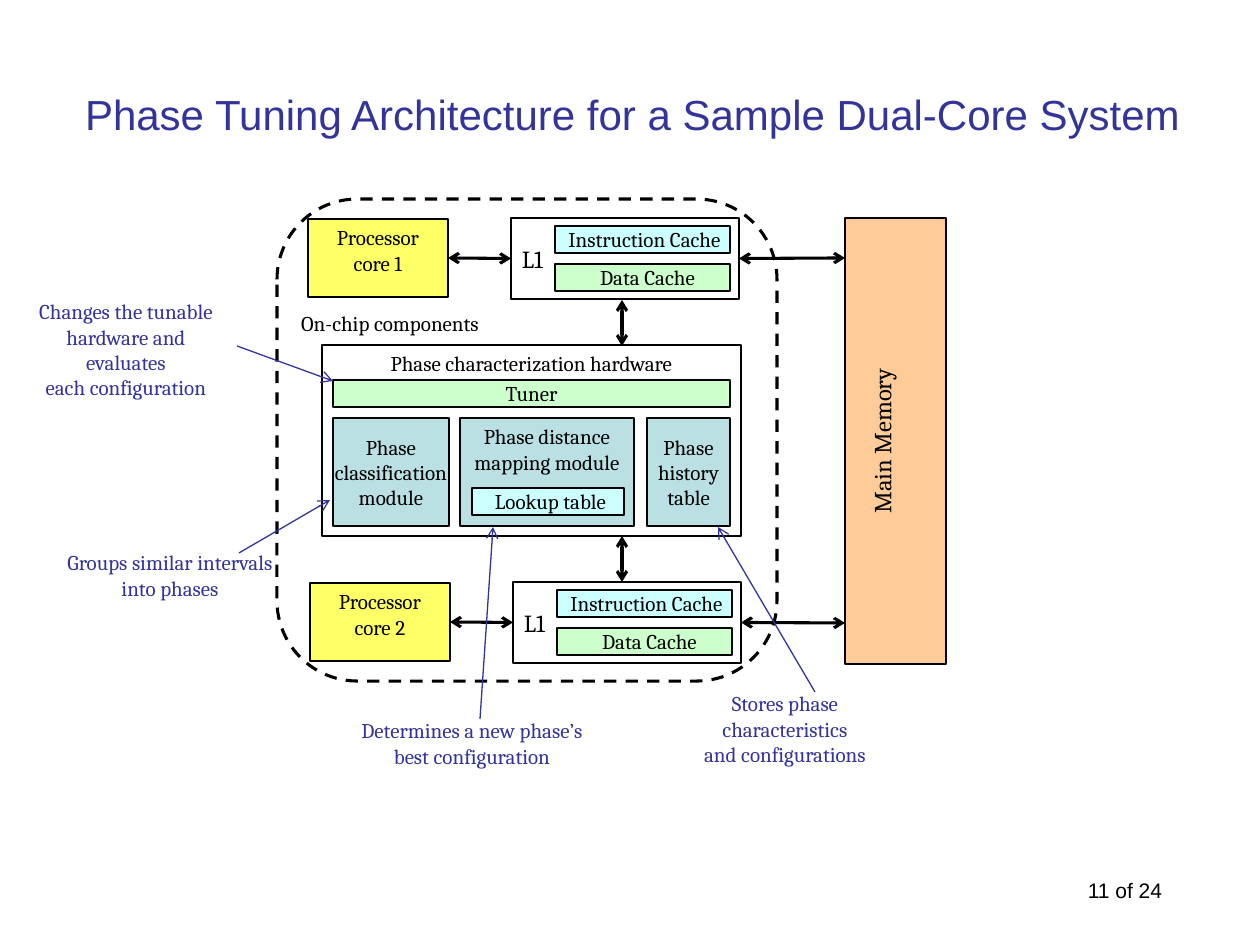
import pptx
import pptx.util
import pptx.dml.color
import pptx.enum.dml
import pptx.enum.shapes
import pptx.enum.text
import pptx.oxml
import pptx.oxml.ns

PX = 914400 / 126
COLORS = {
    "ink": "000000",
    "note": "333399",
    "core": "FFFF66",
    "memory": "FFCC99",
    "green": "CCFFCC",
    "cyan": "CCFFFF",
    "module": "BBE0E3",
}
SHAPE = pptx.enum.shapes.MSO_SHAPE
TOP = pptx.enum.text.MSO_ANCHOR.TOP
MIDDLE = pptx.enum.text.MSO_ANCHOR.MIDDLE


def px(*lengths):
    return [pptx.util.Emu(round(length * PX)) for length in lengths]


def rgb(name):
    return pptx.dml.color.RGBColor.from_string(COLORS[name])


def write(holder, text, size=12, font="Cambria", color="ink", anchor=TOP,
          wrap=False, insets=(8, 6, 8, 6)):
    frame = holder.text_frame
    frame.word_wrap = wrap
    frame.vertical_anchor = anchor
    (frame.margin_left, frame.margin_top,
     frame.margin_right, frame.margin_bottom) = px(*insets)
    for index, line in enumerate(text.split("\n")):
        paragraph = frame.add_paragraph() if index else frame.paragraphs[0]
        paragraph.alignment = pptx.enum.text.PP_ALIGN.CENTER
        run = paragraph.add_run()
        run.text = line
        run.font.size = pptx.util.Pt(size)
        run.font.name = font
        run.font.color.rgb = rgb(color)


def label(shapes, box, text, **style):
    holder = shapes.add_textbox(*px(*box))
    write(holder, text, **style)
    return holder


def block(shapes, box, fill=None, text=None, kind=SHAPE.RECTANGLE, weight=1.5, **style):
    shape = shapes.add_shape(kind, *px(*box))
    shape.shadow.inherit = False
    if fill:
        shape.fill.solid()
        shape.fill.fore_color.rgb = rgb(fill)
    else:
        shape.fill.background()
    shape.line.color.rgb = rgb("ink")
    shape.line.width = pptx.util.Pt(weight)
    if text:
        write(shape, text, **style)
    return shape


def arrow(shapes, start, end, color="ink", weight=1.75, ends=("head", "tail")):
    connector = shapes.add_connector(
        pptx.enum.shapes.MSO_CONNECTOR.STRAIGHT, *px(*start, *end))
    connector.line.color.rgb = rgb(color)
    connector.line.width = pptx.util.Pt(weight)
    line = connector.line._get_or_add_ln()
    for end_name in ends:
        tip = pptx.oxml.parse_xml(
            f'<a:{end_name}End {pptx.oxml.ns.nsdecls("a")} type="arrow"/>')
        line.append(tip)
    connector._element.spPr.append(
        pptx.oxml.parse_xml(f'<a:effectLst {pptx.oxml.ns.nsdecls("a")}/>'))
    return connector


def heading(shapes, box):
    label(shapes, box, "Phase Tuning Architecture for a Sample Dual-Core System",
          size=24, font="Arial", color="note", anchor=MIDDLE, wrap=True)


def page_number(shapes, box):
    label(shapes, box, "11 of 24", font="Arial", wrap=True)


def main_memory(shapes, box):
    left, top, width, height = box
    shift = (height - width) / 2
    memory = block(shapes, (left - shift, top + shift, height, width), "memory",
                   "Main Memory", size=14, anchor=MIDDLE, insets=(13, 6, 13, 34))
    memory.rotation = 270


def core_cluster(shapes, left, top, number):
    parts = shapes.add_group_shape().shapes
    core = block(parts, (left, top + 1, 140, 78), "core", f"Processor\ncore {number}")
    link = arrow(parts, (left + 203, top + 41), (left + 140, top + 40))
    caches = (("Data Cache", "green", 46, 10), ("Instruction Cache", "cyan", 8, 4))
    for name, fill, offset, indent in caches:
        block(parts, (left + 247, top + offset, 175, 27), fill, name,
              anchor=MIDDLE, insets=(indent, 0, 0, 0))
    level_one = block(parts, (left + 203, top, 228, 81))
    label(parts, (left + 198, top + 20, 53, 43), "L1", size=14)
    link.begin_connect(level_one, 1)
    link.end_connect(core, 3)
    return level_one


def characterization_hardware(shapes, box):
    left, top, width, height = box
    row = top + 73
    block(shapes, (left + 325, row, 83, 108), "module", "Phase\nhistory\ntable",
          anchor=MIDDLE)
    mapping = shapes.add_group_shape().shapes
    block(mapping, (left + 138, row, 174, 108), "module",
          "Phase distance\nmapping module")
    block(mapping, (left + 150, row + 70, 152, 27), "cyan", "Lookup table",
          anchor=MIDDLE, insets=(5, 0, 0, 0))
    block(shapes, (left + 11, row, 116, 108), "module",
          "Phase\nclassification\nmodule", anchor=MIDDLE, insets=(0, 6, 0, 6))
    block(shapes, (left + 11, top + 35, width - 22, 27), "green", "Tuner",
          anchor=MIDDLE, insets=(0, 0, 0, 0))
    block(shapes, box, text="Phase characterization hardware")


def chip_outline(shapes, box):
    outline = block(shapes, box, kind=SHAPE.ROUNDED_RECTANGLE, weight=1.75)
    outline.line.dash_style = pptx.enum.dml.MSO_LINE.DASH
    label(shapes, (box[0] + 8, box[1] + 106, 210, 38), "On-chip components")


def annotation(shapes, box, text, start, target):
    parts = shapes.add_group_shape().shapes
    arrow(parts, start, target, color="note", weight=0.75, ends=("tail",))
    label(parts, box, text, color="note", wrap=True)


def main():
    deck = pptx.Presentation()
    deck.slide_width, deck.slide_height = px(1260, 945)
    shapes = deck.slides.add_slide(deck.slide_layouts[6]).shapes

    page_number(shapes, (1045, 872, 160, 38))
    heading(shapes, (21, 35, 1223, 158))
    main_memory(shapes, (845, 218, 101, 446))
    level_ones = [core_cluster(shapes, 308, 218, 1), core_cluster(shapes, 310, 582, 2)]
    characterization_hardware(shapes, (322, 345, 419, 191))
    for top in (300, 536):
        arrow(shapes, (622, top), (622, top + 46))
    chip_outline(shapes, (277, 199, 500, 482))
    for level_one, height in zip(level_ones, (258, 623)):
        arrow(shapes, (740, height), (845, height)).begin_connect(level_one, 3)

    annotations = (
        ((26, 293, 200, 90), "Changes the tunable\nhardware and evaluates\neach configuration",
         (237, 346), (333, 381)),
        ((52, 544, 236, 63), "Groups similar intervals\ninto phases",
         (239, 553), (330, 500)),
        ((342, 712, 260, 63), "Determines a new phase’s\nbest configuration",
         (480, 719), (493, 527)),
        ((685, 685, 200, 90), "Stores phase characteristics\nand configurations",
         (815, 692), (718, 527)),
    )
    for box, text, start, target in annotations:
        annotation(shapes, box, text, start, target)

    deck.save("out.pptx")


if __name__ == "__main__":
    main()
